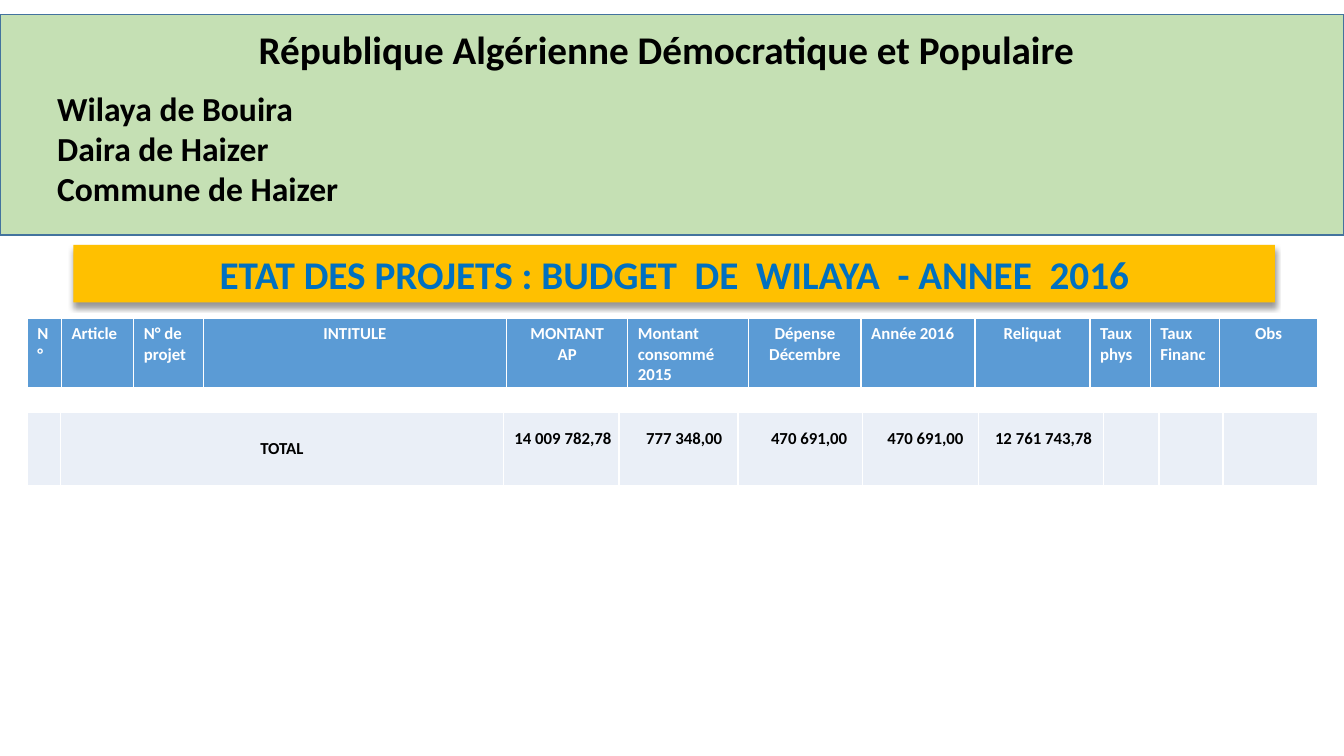
import pptx
import pptx.dml.color
import pptx.enum.shapes
import pptx.enum.text
import pptx.oxml
import pptx.oxml.ns
import pptx.util

Cm = pptx.util.Cm
Pt = pptx.util.Pt
RGBColor = pptx.dml.color.RGBColor
Align = pptx.enum.text.PP_ALIGN
Anchor = pptx.enum.text.MSO_ANCHOR

BLACK = RGBColor(0x00, 0x00, 0x00)
WHITE = RGBColor(0xFF, 0xFF, 0xFF)
GREEN = RGBColor(0xC5, 0xE0, 0xB4)
GREEN_EDGE = RGBColor(0x43, 0x73, 0x9E)
AMBER = RGBColor(0xFF, 0xC0, 0x00)
TITLE_BLUE = RGBColor(0x00, 0x70, 0xC0)
HEADER_BLUE = RGBColor(0x5B, 0x9B, 0xD5)
PALE_BLUE = RGBColor(0xEA, 0xEF, 0xF7)

HEADINGS = [
    ("N°", 0.86, Align.LEFT),
    ("Article", 1.82, Align.LEFT),
    ("N° de projet", 1.75, Align.LEFT),
    ("INTITULE", 7.65, Align.CENTER),
    ("MONTANT\nAP", 3.05, Align.CENTER),
    ("Montant consommé 2015", 3.05, Align.LEFT),
    ("Dépense\nDécembre", 2.83, Align.CENTER),
    ("Année 2016", 2.87, Align.LEFT),
    ("Reliquat", 2.9, Align.CENTER),
    ("Taux\nphys", 1.52, Align.LEFT),
    ("Taux\nFinanc", 1.75, Align.LEFT),
    ("Obs", 2.46, Align.CENTER),
]
TOTALS = [
    ("14 009 782,78", 2.92, 0.19),
    ("777 348,00", 3.0, 0.4),
    ("470 691,00", 3.13, 0.38),
    ("470 691,00", 2.93, 0.38),
    ("12 761 743,78", 3.15, 0.29),
]
REMAINING_WIDTHS = [1.4, 1.61, 2.39]


def write_text(frame, text, size=12, color=BLACK, align=Align.LEFT):
    """Write bold Calibri text, one paragraph per line."""
    frame.word_wrap = True
    for index, line in enumerate(text.split("\n")):
        paragraph = frame.add_paragraph() if index else frame.paragraphs[0]
        paragraph.alignment = align
        run = paragraph.add_run()
        run.text = line
        run.font.name = "Calibri"
        run.font.size = Pt(size)
        run.font.bold = True
        run.font.color.rgb = color


def add_text_box(slide, left, top, width, height, text, **text_format):
    """Add a text box with formatted text."""
    box = slide.shapes.add_textbox(Cm(left), Cm(top), Cm(width), Cm(height))
    write_text(box.text_frame, text, **text_format)


def add_rectangle(slide, left, top, width, height, fill, line=None):
    """Add a flat rectangle and return it."""
    shape = slide.shapes.add_shape(
        pptx.enum.shapes.MSO_SHAPE.RECTANGLE, Cm(left), Cm(top), Cm(width), Cm(height))
    shape.shadow.inherit = False
    shape.fill.solid()
    shape.fill.fore_color.rgb = fill
    if line is None:
        shape.line.fill.background()
    else:
        shape.line.color.rgb = line
        shape.line.width = Pt(1)
    return shape


def add_drop_shadow(shape):
    """Give a shape a soft shadow straight below it."""
    effects = shape._element.spPr.find(pptx.oxml.ns.qn("a:effectLst"))
    effects.append(pptx.oxml.parse_xml(
        f'<a:outerShdw {pptx.oxml.ns.nsdecls("a")} blurRad="{Pt(4)}" dist="{Pt(3)}" '
        'dir="5400000" algn="t" rotWithShape="0"><a:srgbClr val="000000">'
        '<a:alpha val="40000"/></a:srgbClr></a:outerShdw>'))


def style_cell(cell, fill, bottom_border):
    """Give a cell white borders and a solid fill."""
    properties = cell._tc.get_or_add_tcPr()
    for side, width in zip("LRTB", (1, 1, 1, bottom_border)):
        properties.append(pptx.oxml.parse_xml(
            f'<a:ln{side} {pptx.oxml.ns.nsdecls("a")} w="{Pt(width)}"><a:solidFill>'
            f'<a:srgbClr val="{WHITE}"/></a:solidFill></a:ln{side}>'))
    cell.fill.solid()
    cell.fill.fore_color.rgb = fill


def add_row_table(slide, top, height, widths, fill, bottom_border=1):
    """Add a table of one row and return its cells."""
    table = slide.shapes.add_table(
        1, len(widths), Cm(0.69), Cm(top), Cm(sum(widths)), Cm(height)).table
    table.first_row = False
    table.horz_banding = False
    for column, width in zip(table.columns, widths):
        column.width = Cm(width)
    cells = list(table.rows[0].cells)
    for cell in cells:
        style_cell(cell, fill, bottom_border)
    return cells


def write_total(cell, text, align, right=0, bottom=0):
    """Write a total in the middle of a cell with the given insets."""
    cell.vertical_anchor = Anchor.MIDDLE
    cell.margin_left = cell.margin_top = 0
    cell.margin_right = Cm(right)
    cell.margin_bottom = Cm(bottom)
    write_text(cell.text_frame, text, align=align)


def add_header_table(slide):
    """Add the row of column headings."""
    widths = [width for _, width, _ in HEADINGS]
    cells = add_row_table(slide, 8.03, 1.72, widths, HEADER_BLUE, bottom_border=3)
    for cell, (text, _, align) in zip(cells, HEADINGS):
        write_text(cell.text_frame, text, color=WHITE, align=align)


def add_total_table(slide):
    """Add the row of totals."""
    widths = [0.84, 11.15] + [width for _, width, _ in TOTALS] + REMAINING_WIDTHS
    cells = add_row_table(slide, 10.39, 1.85, widths, PALE_BLUE)
    write_total(cells[1], "TOTAL", Align.CENTER)
    for cell, (text, _, right) in zip(cells[2:], TOTALS):
        write_total(cell, text, Align.RIGHT, right=right, bottom=0.5)


def main():
    """Build the budget slide and save it."""
    presentation = pptx.Presentation()
    presentation.slide_width = Cm(33.87)
    presentation.slide_height = Cm(19.05)
    slide = presentation.slides.add_slide(presentation.slide_layouts[6])

    add_rectangle(slide, 0, 0.36, 33.87, 5.56, GREEN, line=GREEN_EDGE)
    add_text_box(slide, 6.27, 0.51, 21.31, 1.45,
                 "République Algérienne Démocratique et Populaire", size=28)
    add_text_box(slide, 1.19, 2.08, 7.67, 3.33,
                 "Wilaya de Bouira\nDaira de Haizer\nCommune de Haizer", size=24)

    banner = add_rectangle(slide, 1.85, 6.17, 30.28, 1.45, AMBER)
    add_drop_shadow(banner)
    write_text(banner.text_frame, "ETAT DES PROJETS : BUDGET  DE  WILAYA  - ANNEE  2016",
               size=28, color=TITLE_BLUE, align=Align.CENTER)

    add_header_table(slide)
    add_total_table(slide)
    presentation.save("out.pptx")


if __name__ == "__main__":
    main()
